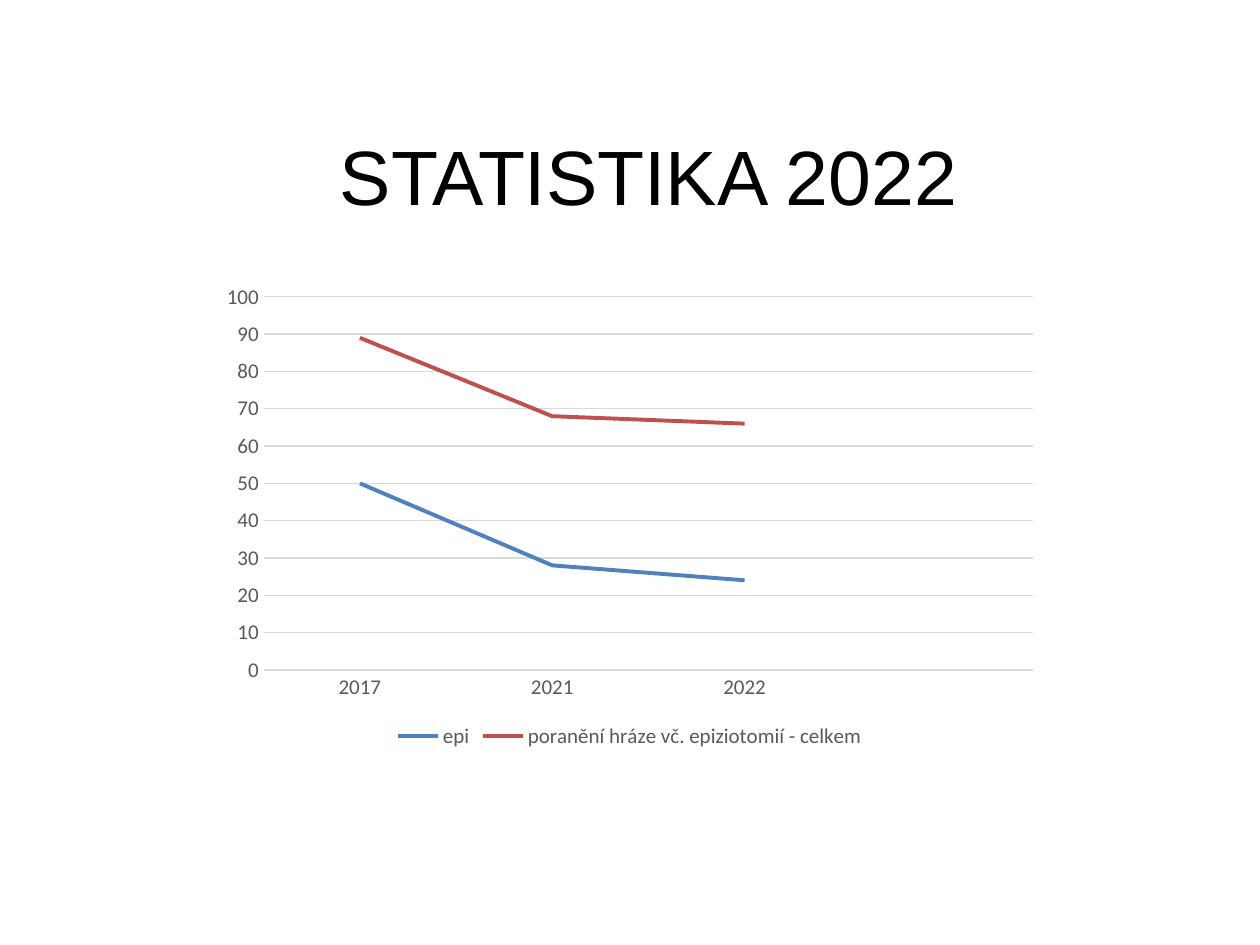
from pptx import Presentation
from pptx import util as u
from pptx.chart.data import CategoryChartData
from pptx.dml.color import RGBColor
from pptx.enum import chart as ch
from pptx.enum import text

BLACK = RGBColor(0x00, 0x00, 0x00)
GREY = RGBColor(0x59, 0x59, 0x59)
PALE = RGBColor(0xD9, 0xD9, 0xD9)
BLUE = RGBColor(0x4F, 0x81, 0xBD)
RED = RGBColor(0xC0, 0x50, 0x4D)

TITLE_ONLY = 5


class SlideBuilder:
    """Holds the fonts and the current slide."""

    title_font = "Arial"
    chart_font = "Calibri"

    def __init__(self, slide):
        self.slide = slide

    def style(self, font, name, size, color):
        font.name = name
        font.size = u.Pt(size)
        font.color.rgb = color

    def outline(self, line, color, width):
        line.color.rgb = color
        line.width = u.Pt(width)

    def title(self, words, left, top, width, height):
        box = self.slide.shapes.title
        box.left, box.top = u.Pt(left), u.Pt(top)
        box.width, box.height = u.Pt(width), u.Pt(height)
        frame = box.text_frame
        frame.text = words
        frame.vertical_anchor = text.MSO_ANCHOR.MIDDLE
        para = frame.paragraphs[0]
        para.alignment = text.PP_ALIGN.CENTER
        self.style(para.runs[0].font, self.title_font, 44, BLACK)

    def line_chart(self, categories, series, left, top, width, height):
        """Draw one line for each (name, values, color) in series."""
        data = CategoryChartData()
        data.categories = categories
        for name, values, _ in series:
            data.add_series(name, values)
        chart = self.slide.shapes.add_chart(
            ch.XL_CHART_TYPE.LINE, u.Pt(left), u.Pt(top),
            u.Pt(width), u.Pt(height), data).chart
        chart.has_title = False
        self.style(chart.font, self.chart_font, 10, BLACK)

        for plotted, (_, _, color) in zip(chart.plots[0].series, series):
            plotted.smooth = False
            plotted.marker.style = ch.XL_MARKER_STYLE.NONE
            self.outline(plotted.format.line, color, 2.25)

        for axis in (chart.category_axis, chart.value_axis):
            axis.major_tick_mark = ch.XL_TICK_MARK.NONE
            axis.minor_tick_mark = ch.XL_TICK_MARK.NONE
            self.style(axis.tick_labels.font, self.chart_font, 12, GREY)
        self.outline(chart.category_axis.format.line, PALE, 0.75)

        scale = chart.value_axis
        scale.minimum_scale, scale.maximum_scale, scale.major_unit = 0, 100, 10
        scale.format.line.fill.background()
        scale.has_major_gridlines = True
        self.outline(scale.major_gridlines.format.line, PALE, 0.75)

        chart.has_legend = True
        chart.legend.position = ch.XL_LEGEND_POSITION.BOTTOM
        chart.legend.include_in_layout = False
        self.style(chart.legend.font, self.chart_font, 12, GREY)


def main():
    deck = Presentation()
    deck.slide_width, deck.slide_height = u.Pt(720), u.Pt(540)
    page = SlideBuilder(deck.slides.add_slide(deck.slide_layouts[TITLE_ONLY]))
    page.title("STATISTIKA 2022", 64.8, -53.3, 612, 306)
    page.line_chart(
        ["2017", "2021", "2022", ""],
        [("epi", [50, 28, 24, None], BLUE),
         ("poranění hráze vč. epiziotomií - celkem", [89, 68, 66, None], RED)],
        120, 157, 480, 273.6)
    deck.save("out.pptx")


if __name__ == "__main__":
    main()
